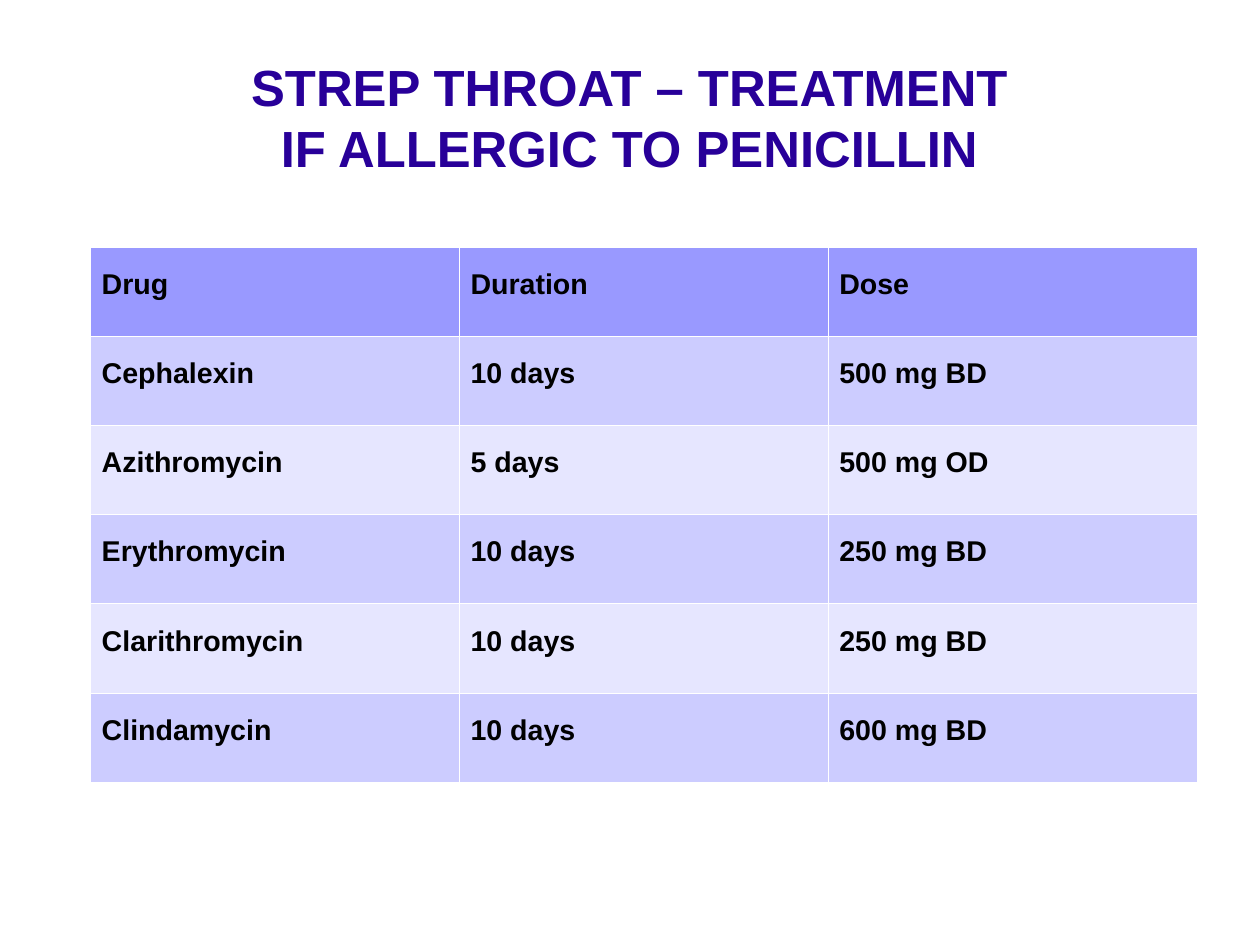
from typing import NamedTuple

import lxml.etree
import pptx
import pptx.dml.color
import pptx.enum.text
import pptx.oxml.ns
import pptx.util

Inches = pptx.util.Inches
Pt = pptx.util.Pt
qn = pptx.oxml.ns.qn

COLORS = {
    "title": "280099",
    "text": "000000",
    "header": "9999FF",
    "odd": "CCCCFF",
    "even": "E6E6FF",
    "border": "FFFFFF",
}
FONT = "Arial"
CM_PER_INCH = 2.54


class Treatment(NamedTuple):
    drug: str
    duration: str
    dose: str


HEADER = Treatment("Drug", "Duration", "Dose")
TREATMENTS = [
    Treatment("Cephalexin", "10 days", "500 mg BD"),
    Treatment("Azithromycin", "5 days", "500 mg OD"),
    Treatment("Erythromycin", "10 days", "250 mg BD"),
    Treatment("Clarithromycin", "10 days", "250 mg BD"),
    Treatment("Clindamycin", "10 days", "600 mg BD"),
]
TABLE_WIDTH = 9.68
ROW_HEIGHT = 0.78


def rgb(name: str) -> pptx.dml.color.RGBColor:
    return pptx.dml.color.RGBColor.from_string(COLORS[name])


def write_text(tf, text: str, *, size: float, color: str, bold: bool = True,
               align=pptx.enum.text.PP_ALIGN.LEFT, spacing: float = 1.0) -> None:
    """Write each line of text as a paragraph of its own."""
    for i, line in enumerate(text.split("\n")):
        p = tf.paragraphs[0] if i == 0 else tf.add_paragraph()
        p.alignment = align
        p.line_spacing = spacing
        p.space_before = p.space_after = Pt(0)
        r = p.add_run()
        r.text = line
        r.font.name = FONT
        r.font.size = Pt(size)
        r.font.bold = bold
        r.font.color.rgb = rgb(color)


def add_borders(cell) -> None:
    tc_pr = cell._tc.get_or_add_tcPr()
    for side in ("a:lnL", "a:lnR", "a:lnT", "a:lnB"):
        ln = lxml.etree.SubElement(tc_pr, qn(side), w=str(Pt(0.11)))
        fill = lxml.etree.SubElement(ln, qn("a:solidFill"))
        lxml.etree.SubElement(fill, qn("a:srgbClr"), val=COLORS["border"])


def set_slide_size(prs, width_cm: float, height_cm: float) -> None:
    """Set a custom size, dropping the template's 4:3 preset."""
    prs.slide_width = Inches(width_cm / CM_PER_INCH)
    prs.slide_height = Inches(height_cm / CM_PER_INCH)
    prs.element.find(qn("p:sldSz")).attrib.pop("type", None)


def add_title(s, text: str) -> None:
    sp = s.shapes.title
    sp.left, sp.top = Inches(0.55), Inches(0.33)
    sp.width, sp.height = Inches(9.92), Inches(1.38)
    tf = sp.text_frame
    tf.margin_left = tf.margin_right = tf.margin_top = tf.margin_bottom = 0
    tf.vertical_anchor = pptx.enum.text.MSO_ANCHOR.MIDDLE
    tf.auto_size = pptx.enum.text.MSO_AUTO_SIZE.NONE
    tf.word_wrap = True
    write_text(tf, text, size=32, color="title",
               align=pptx.enum.text.PP_ALIGN.CENTER)


def add_treatment_table(s, rows: list[Treatment]) -> None:
    table = s.shapes.add_table(
        len(rows), len(HEADER), Inches(0.79), Inches(2.16),
        Inches(TABLE_WIDTH), Inches(ROW_HEIGHT * len(rows))).table
    for i, treatment in enumerate(rows):
        color = "header" if i == 0 else "odd" if i % 2 else "even"
        for j, text in enumerate(treatment):
            cell = table.cell(i, j)
            add_borders(cell)
            cell.fill.solid()
            cell.fill.fore_color.rgb = rgb(color)
            write_text(cell.text_frame, text, size=18, color="text", spacing=1.5)


def main() -> None:
    prs = pptx.Presentation()
    set_slide_size(prs, 28, 21)
    s = prs.slides.add_slide(prs.slide_layouts.get_by_name("Title Only"))
    add_title(s, "STREP THROAT – TREATMENT\nIF ALLERGIC TO PENICILLIN")
    add_treatment_table(s, [HEADER, *TREATMENTS])
    prs.save("out.pptx")


if __name__ == "__main__":
    main()
